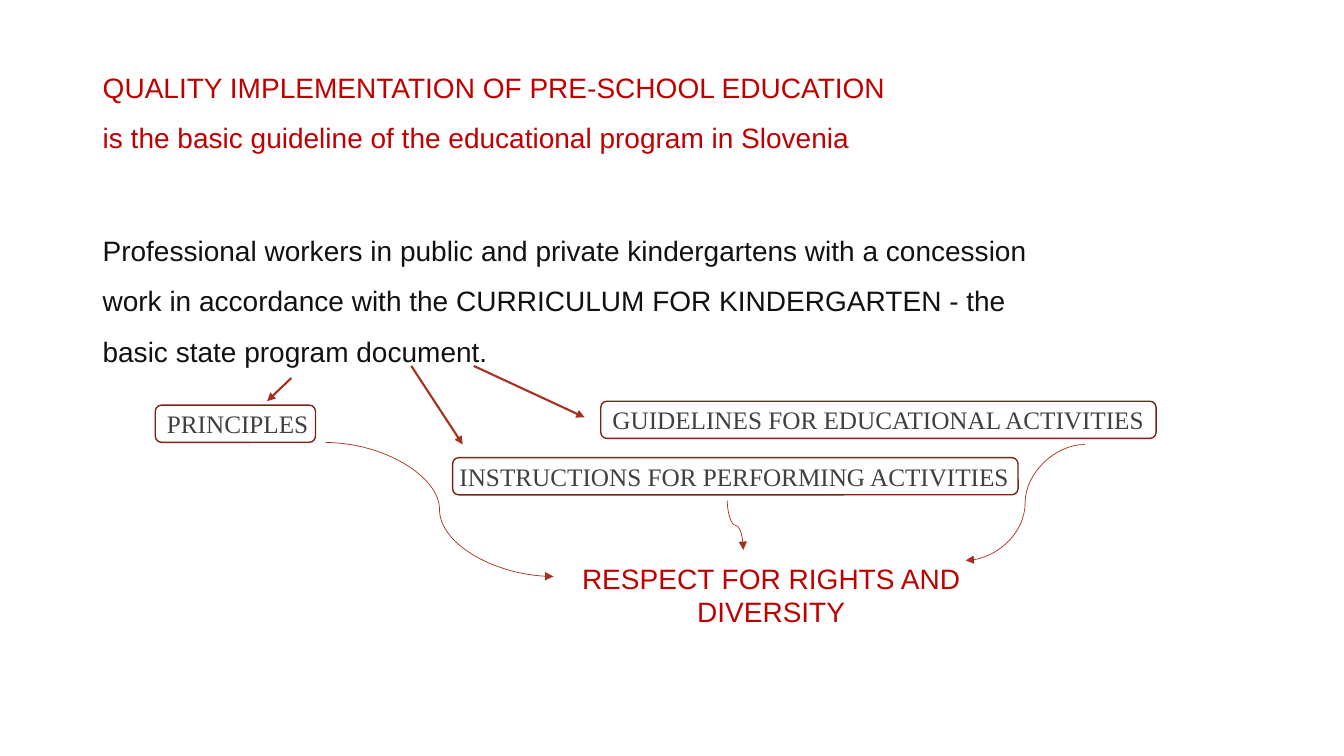
from dataclasses import dataclass

import pptx
import pptx.dml.color
import pptx.enum.shapes
import pptx.enum.text
import pptx.oxml
import pptx.oxml.ns
import pptx.util

Pt = pptx.util.Pt
RGB = pptx.dml.color.RGBColor.from_string
Anchor = pptx.enum.text.MSO_ANCHOR
Align = pptx.enum.text.PP_ALIGN
Connector = pptx.enum.shapes.MSO_CONNECTOR


@dataclass(frozen=True)
class Theme:
    accent: str = "C00000"
    ink: str = "111111"
    label_ink: str = "404040"
    arrow: str = "A63121"
    border: str = "7B2418"
    sans: str = "Arial"
    serif: str = "Times New Roman"
    text_size: int = 20
    label_size: int = 18
    arrow_width: float = 1.5
    curve_width: float = 0.5
    border_width: float = 1


THEME = Theme()


def place(shape, left, top, width, height):
    shape.left, shape.top = Pt(left), Pt(top)
    shape.width, shape.height = Pt(width), Pt(height)


def write(shape, text, color, font=THEME.sans, size=THEME.text_size,
          anchor=Anchor.TOP, align=Align.LEFT, spacing=None):
    frame = shape.text_frame
    frame.text = text
    frame.word_wrap = True
    frame.auto_size = pptx.enum.text.MSO_AUTO_SIZE.NONE
    frame.vertical_anchor = anchor
    for paragraph in frame.paragraphs:
        paragraph.alignment = align
        paragraph.line_spacing = spacing
        paragraph.space_before = Pt(0)
        for run in paragraph.runs:
            run.font.name = font
            run.font.size = Pt(size)
            run.font.color.rgb = RGB(color)


def add_text(slide, box, text, color, **style):
    write(slide.shapes.add_textbox(*map(Pt, box)), text, color, **style)


def add_label(slide, box, text, inset):
    label = slide.shapes.add_shape(
        pptx.enum.shapes.MSO_SHAPE.ROUNDED_RECTANGLE, *map(Pt, box))
    label.shadow.inherit = False
    label.fill.background()
    label.line.color.rgb = RGB(THEME.border)
    label.line.width = Pt(THEME.border_width)
    write(label, text, THEME.label_ink, THEME.serif, THEME.label_size, Anchor.MIDDLE)
    frame = label.text_frame
    frame.margin_left = Pt(inset)
    frame.margin_right = frame.margin_top = frame.margin_bottom = Pt(0)


def add_arrow(slide, kind, start, end, width, quarter_turns=0):
    arrow = slide.shapes.add_connector(kind, *map(Pt, start + end))
    arrow.line.color.rgb = RGB(THEME.arrow)
    arrow.line.width = Pt(width)
    head = pptx.oxml.parse_xml(
        f'<a:tailEnd {pptx.oxml.ns.nsdecls("a")} type="triangle"/>')
    arrow.line._get_or_add_ln().append(head)
    properties = arrow._element.spPr
    properties.append(pptx.oxml.parse_xml(
        f'<a:effectLst {pptx.oxml.ns.nsdecls("a")}/>'))
    if quarter_turns:
        properties.xfrm.set("rot", str(quarter_turns * 5400000))


def main():
    deck = pptx.Presentation()
    deck.slide_width, deck.slide_height = Pt(960), Pt(540)
    slide = deck.slides.add_slide(deck.slide_layouts[5])

    title = slide.shapes.title
    place(title, 66.2, 41.8, 635, 72)
    write(title, "QUALITY IMPLEMENTATION OF PRE-SCHOOL EDUCATION\v"
          "is the basic guideline of the educational program in Slovenia",
          THEME.accent, anchor=Anchor.BOTTOM, spacing=1.5)

    add_text(slide, (66.2, 151.2, 697.7, 120),
             "Professional workers in public and private kindergartens with a "
             "concession work in accordance with the CURRICULUM FOR KINDERGARTEN "
             "- the basic state program document.", THEME.ink, spacing=1.5)

    for start, end in [
        ((338.4, 261.4), (417.6, 298.1)),
        ((293.8, 261.4), (330.5, 317.5)),
        ((208.1, 270), (190.8, 286.6)),
    ]:
        add_arrow(slide, Connector.STRAIGHT, start, end, THEME.arrow_width)

    for start, end, quarter_turns in [
        ((232.6, 316.1), (395.3, 411.8), 0),
        ((774.7, 317.5), (689.8, 400.3), 0),
        ((542.9, 369.4), (507.6, 380.9), 3),
    ]:
        add_arrow(slide, Connector.CURVE, start, end, THEME.curve_width, quarter_turns)

    for box, text, inset in [
        ((429.1, 286.6, 396.7, 26.6), "GUIDELINES FOR EDUCATIONAL ACTIVITIES", 7.2),
        ((323.3, 326.9, 403.9, 26.6), "INSTRUCTIONS FOR PERFORMING ACTIVITIES", 3.6),
        ((110.9, 289.4, 114.5, 26.6), "PRINCIPLES", 7.2),
    ]:
        add_label(slide, box, text, inset)

    add_text(slide, (375.1, 397.4, 351.4, 55.4), "RESPECT FOR RIGHTS AND DIVERSITY",
             THEME.accent, align=Align.CENTER)

    deck.save("out.pptx")


if __name__ == "__main__":
    main()
